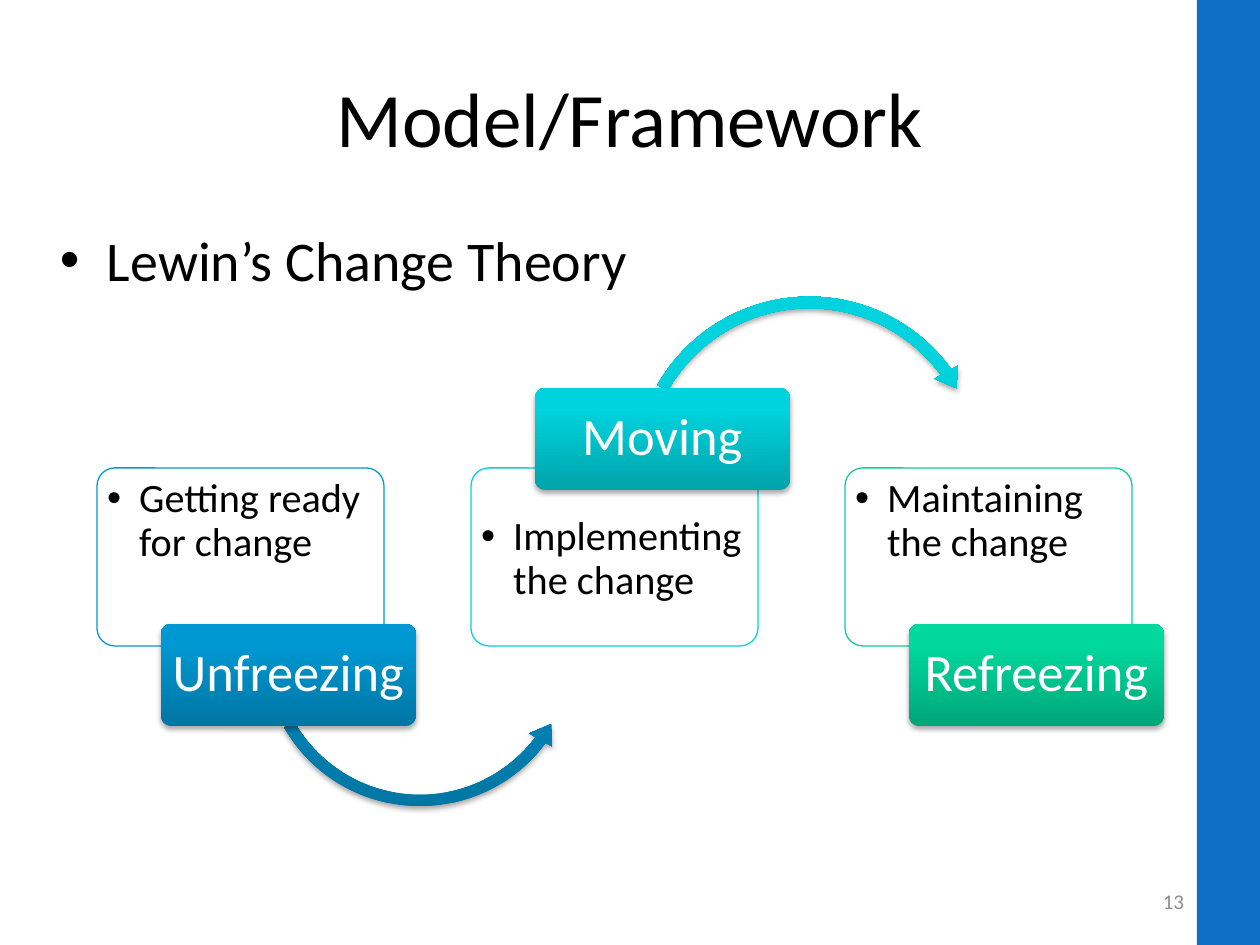
from copy import deepcopy

from lxml.etree import SubElement
from pptx import Presentation
from pptx.dml.color import RGBColor
from pptx.enum.shapes import MSO_SHAPE as Shape
from pptx.enum.text import MSO_ANCHOR as Anchor, PP_ALIGN as Align
from pptx.oxml.ns import qn
from pptx.util import Pt

PX = 914400 // 126
FONT = "Calibri"
STEPS = [
    dict(head="Unfreezing", note="Getting ready for change", edge="009AD4",
         tones=("0075A2", "0098D2", "0099D3"), up=False,
         arrow=(Shape.LEFT_CIRCULAR_ARROW, 159, 18, 328,
                (0.035, 4.356, 22.055, 90.189, 0.041))),
    dict(head="Moving", note="Implementing the change", edge="06D0D9",
         tones=("00A3AA", "00D3DD", "00D4DE"), up=True,
         arrow=(Shape.CIRCULAR_ARROW, 156, -179, 365,
                (0.032, 3.885, 194.409, 125.805, 0.037))),
    dict(head="Refreezing", note="Maintaining the change", edge="0BCF9A",
         tones=("00A679", "00D89D", "00D99E"), up=False, arrow=None),
]


def tint(color, code):
    """Set a colour from a hex string."""
    color.rgb = RGBColor.from_string(code)


def place(box):
    """Turn a px box into EMU."""
    return [n * PX for n in box]


def write(shape, text, size, code, align=Align.LEFT, anchor=Anchor.TOP,
          ins=(13, 6, 13, 6), hang=0, lead=1.0):
    """Write one paragraph, bulleted when it has a hanging indent."""
    frame = shape.text_frame
    frame.word_wrap = True
    frame.vertical_anchor = anchor
    (frame.margin_left, frame.margin_top,
     frame.margin_right, frame.margin_bottom) = place(ins)
    para = frame.paragraphs[0]
    para.text = text
    para.alignment = align
    para.line_spacing = lead
    if hang:
        props = para._p.get_or_add_pPr()
        props.set("marL", str(hang * PX))
        props.set("indent", str(-hang * PX))
        SubElement(props, qn("a:buFont"), typeface="Arial")
        SubElement(props, qn("a:buChar"), char="•")
    para.font.name = FONT
    para.font.size = Pt(size)
    tint(para.font.color, code)


def draw(slide, kind, box):
    """Add a preset shape with neither line nor shadow."""
    shape = slide.shapes.add_shape(kind, *place(box))
    shape.shadow.inherit = False
    shape.line.fill.background()
    return shape


def gloss(shape, tones):
    """Give a shape an upward gradient and a soft shadow."""
    shape.fill.gradient()
    shape.fill.gradient_angle = 90
    props = shape._element.spPr
    stops = props.find(".//" + qn("a:gsLst"))
    stops.append(deepcopy(stops[-1]))
    for stop, spot, tone in zip(shape.fill.gradient_stops, (0, 0.8, 1), tones):
        stop.position = spot
        tint(stop.color, tone)
    shade = SubElement(props.find(qn("a:effectLst")), qn("a:outerShdw"),
                       blurRad="40000", dist="23000", dir="5400000",
                       rotWithShape="0")
    black = SubElement(shade, qn("a:srgbClr"), val="000000")
    SubElement(black, qn("a:alpha"), val="35000")


def stage(slide, box, step):
    """Draw one step: its note panel, arrow and heading."""
    left, top, wide, high = box
    up = step["up"]
    panel = draw(slide, Shape.ROUNDED_RECTANGLE, box)
    panel.adjustments[0] = 0.1
    panel.fill.solid()
    tint(panel.fill.fore_color, "FFFFFF")
    white = panel._element.spPr.find(".//" + qn("a:srgbClr"))
    SubElement(white, qn("a:alpha"), val="90000")
    panel.line.width = Pt(0.75)
    tint(panel.line.color, step["edge"])
    ins = (5, 43, 5, 5) if up else (5, 5, 5, 43)
    write(panel, step["note"], 23, "000000", ins=ins, hang=32, lead=0.9)
    if step["arrow"]:
        kind, dx, dy, side, bends = step["arrow"]
        arrow = draw(slide, kind, (left + dx, top + dy, side, side))
        for i, bend in enumerate(bends):
            arrow.adjustments[i] = bend
        gloss(arrow, step["tones"])
    drop = -80 if up else 156
    head = draw(slide, Shape.ROUNDED_RECTANGLE,
                (left + 64, top + drop, 255, 102))
    head.adjustments[0] = 0.1
    gloss(head, step["tones"])
    write(head, step["head"], 30, "FFFFFF", Align.CENTER, Anchor.MIDDLE,
          ins=(8, 6, 8, 6), lead=0.9)


def flow(slide, box):
    """Spread the steps evenly across a box."""
    left, top, wide, high = box
    width = 287
    gap = (wide - width) // (len(STEPS) - 1)
    for i, step in enumerate(STEPS):
        stage(slide, (left + i * gap, top, width, high), step)


def label(slide, box, *args, **kw):
    """Add a text box."""
    write(slide.shapes.add_textbox(*place(box)), *args, **kw)


def band(slide, box):
    """Draw the side band."""
    bar = draw(slide, Shape.RECTANGLE, box)
    bar.fill.solid()
    tint(bar.fill.fore_color, "0F6FC6")


def main():
    """Build and save the slide."""
    deck = Presentation()
    deck.slide_width, deck.slide_height = place((1260, 945))
    slide = deck.slides.add_slide(deck.slide_layouts[6])
    band(slide, (1197, 0, 63, 945))
    label(slide, (63, 38, 1134, 158), "Model/Framework", 44, "000000",
          Align.CENTER, Anchor.MIDDLE)
    label(slide, (47, 219, 1134, 624), "Lewin’s Change Theory", 32, "000000",
          hang=47)
    label(slide, (903, 876, 294, 50), "13", 12, "8C8C8C",
          Align.RIGHT, Anchor.MIDDLE)
    flow(slide, (97, 468, 1035, 178))
    deck.save("out.pptx")


if __name__ == "__main__":
    main()
